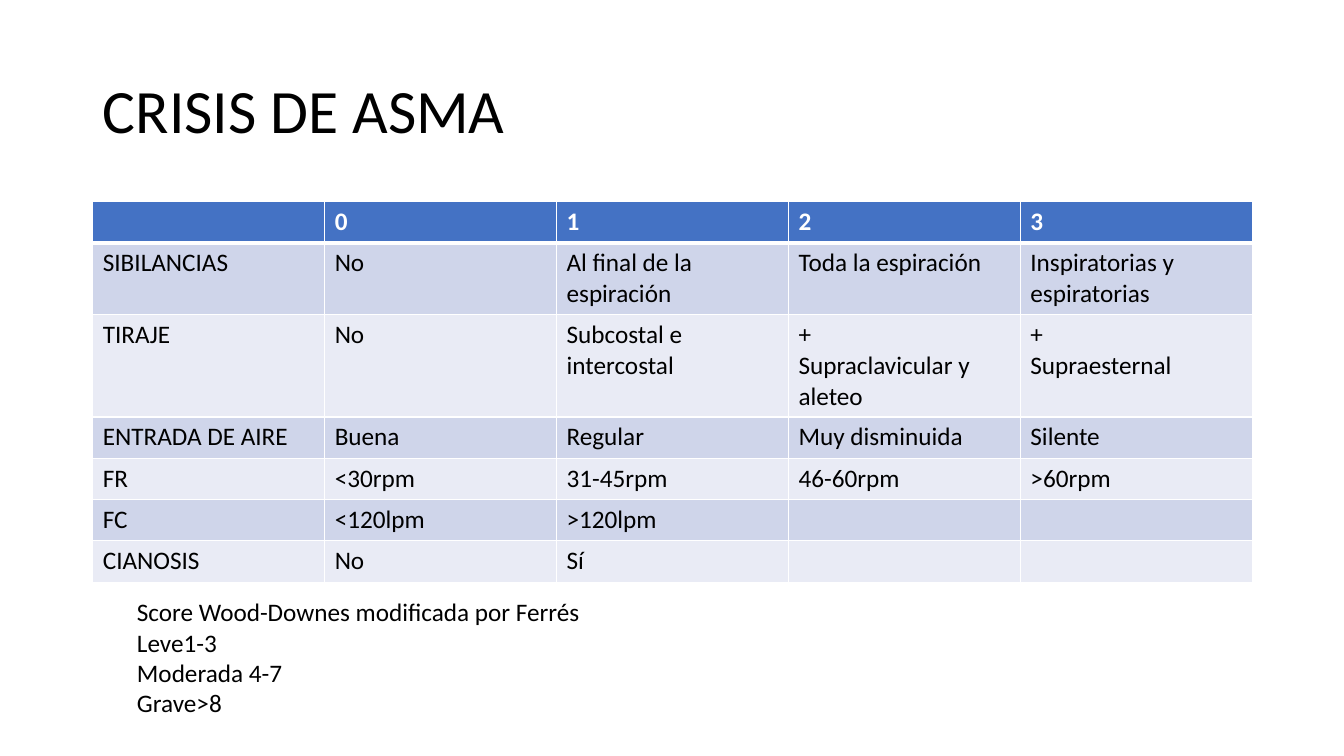
from dataclasses import dataclass

from lxml.etree import SubElement
from pptx import Presentation
from pptx.dml.color import RGBColor
from pptx.enum.text import MSO_ANCHOR, MSO_AUTO_SIZE, PP_ALIGN
from pptx.oxml.ns import qn
from pptx.util import Inches, Pt


@dataclass(frozen=True)
class Theme:
    font: str = "Calibri"
    title_size: int = 44
    body_size: int = 18
    text: str = "000000"
    header_text: str = "FFFFFF"
    header: str = "4472C4"
    bands: tuple = ("E9EBF5", "CFD5EA")
    border: str = "FFFFFF"
    thin: int = 1
    thick: int = 3


theme = Theme()


def style(paragraph, size, color, bold=False):
    paragraph.font.name = theme.font
    paragraph.font.size = Pt(size)
    paragraph.font.bold = bold
    paragraph.font.color.rgb = RGBColor.from_string(color)


def add_border(cell, side, width):
    line = SubElement(cell._tc.get_or_add_tcPr(), qn(f"a:ln{side}"), w=str(Pt(width)))
    fill = SubElement(line, qn("a:solidFill"))
    SubElement(fill, qn("a:srgbClr"), val=theme.border)


prs = Presentation()
prs.slide_width = Inches(13.33)
prs.slide_height = Inches(7.5)
slide = prs.slides.add_slide(prs.slide_layouts[5])

title = slide.shapes.title
title.left, title.top = Inches(0.92), Inches(0.4)
title.width, title.height = Inches(11.5), Inches(1.45)
title.text_frame.text = "CRISIS DE ASMA"
title.text_frame.vertical_anchor = MSO_ANCHOR.MIDDLE
heading = title.text_frame.paragraphs[0]
heading.alignment = PP_ALIGN.LEFT
heading.line_spacing = 0.9
style(heading, theme.title_size, theme.text)

score_rows = [
    ["", "0", "1", "2", "3"],
    ["SIBILANCIAS", "No", "Al final de la espiración", "Toda la espiración", "Inspiratorias y espiratorias"],
    ["TIRAJE", "No", "Subcostal e intercostal", "+\nSupraclavicular y aleteo", "+\nSupraesternal"],
    ["ENTRADA DE AIRE", "Buena", "Regular", "Muy disminuida", "Silente"],
    ["FR", "<30rpm", "31-45rpm", "46-60rpm", ">60rpm"],
    ["FC", "<120lpm", ">120lpm", "", ""],
    ["CIANOSIS", "No", "Sí", "", ""],
]
row_height = Inches(0.41)
scores = slide.shapes.add_table(
    len(score_rows), len(score_rows[0]),
    Inches(0.92), Inches(2), Inches(11.5), row_height * len(score_rows),
).table

for row, values in enumerate(score_rows):
    scores.rows[row].height = row_height
    is_header = row == 0
    fill_color = theme.header if is_header else theme.bands[row % 2]
    text_color = theme.header_text if is_header else theme.text
    for column, value in enumerate(values):
        cell = scores.cell(row, column)
        cell.text = value
        for paragraph in cell.text_frame.paragraphs:
            style(paragraph, theme.body_size, text_color, is_header)
        add_border(cell, "L", theme.thin)
        add_border(cell, "R", theme.thin)
        add_border(cell, "T", theme.thick if row == 1 else theme.thin)
        add_border(cell, "B", theme.thick if is_header else theme.thin)
        cell.fill.solid()
        cell.fill.fore_color.rgb = RGBColor.from_string(fill_color)

severity = slide.shapes.add_textbox(Inches(1.26), Inches(5.87), Inches(7.29), Inches(1.31)).text_frame
severity.word_wrap = True
severity.auto_size = MSO_AUTO_SIZE.SHAPE_TO_FIT_TEXT
severity.text = "\n".join([
    "Score Wood-Downes modificada por Ferrés",
    "Leve1-3",
    "Moderada 4-7",
    "Grave>8",
])
for paragraph in severity.paragraphs:
    style(paragraph, theme.body_size, theme.text)

prs.save("out.pptx")
